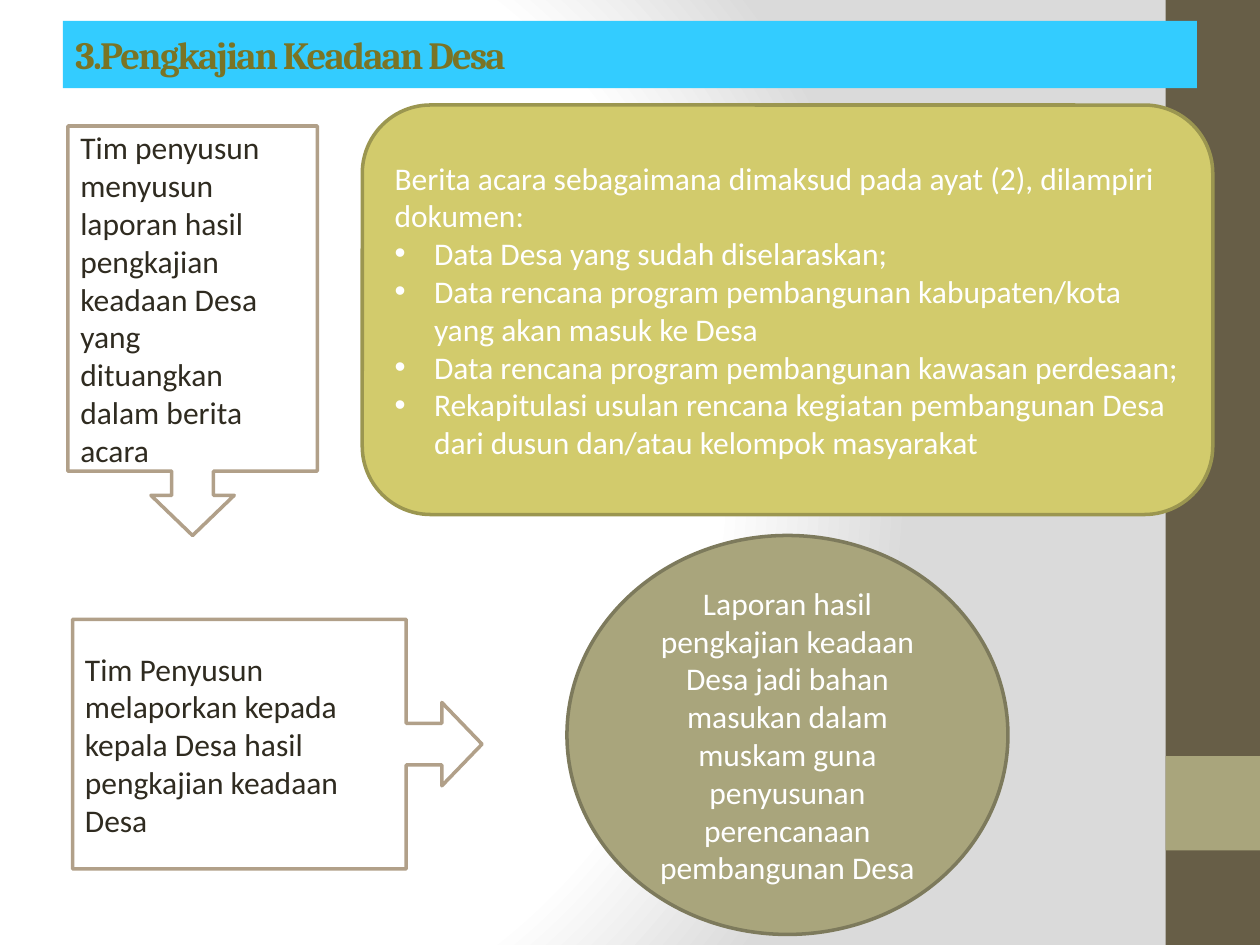
"""Build the village assessment slide (Pengkajian Keadaan Desa)."""
from dataclasses import dataclass
from typing import Optional

from pptx import Presentation
from pptx.dml.color import RGBColor
from pptx.enum.shapes import MSO_SHAPE as Shape
from pptx.enum.text import MSO_ANCHOR as Anchor, PP_ALIGN as Align
from pptx.oxml import parse_xml
from pptx.oxml.ns import nsdecls
from pptx.oxml.xmlchemy import OxmlElement
from pptx.util import Pt

WHITE = RGBColor(0xFF, 0xFF, 0xFF)
INK = RGBColor(0x2F, 0x2B, 0x20)
BROWN = RGBColor(0x67, 0x5E, 0x47)
SAGE = RGBColor(0xA9, 0xA5, 0x7C)
SAGE_EDGE = RGBColor(0x7D, 0x7A, 0x5C)
CYAN = RGBColor(0x33, 0xCC, 0xFF)
OLIVE = RGBColor(0x7A, 0x74, 0x25)
LIME = RGBColor(0xD2, 0xCB, 0x6C)
LIME_EDGE = RGBColor(0x9B, 0x96, 0x50)
TAN = RGBColor(0xB1, 0xA0, 0x89)

BULLET = "•"
BULLET_INDENT = Pt(22.5)
EDGE_WIDTH = Pt(2)
GRADIENT = (
    f'<a:gradFill {nsdecls("a")} rotWithShape="1"><a:gsLst>'
    '<a:gs pos="0"><a:srgbClr val="FFFFFF"/></a:gs>'
    '<a:gs pos="75000"><a:srgbClr val="FFFFFF"/></a:gs>'
    '<a:gs pos="100000"><a:srgbClr val="DADADA"/></a:gs></a:gsLst>'
    '<a:path path="circle"><a:fillToRect l="20000" t="50000" r="100000" b="50000"/>'
    "</a:path></a:gradFill>"
)


@dataclass(frozen=True)
class Panel:
    kind: Shape
    left: float
    top: float
    width: float
    height: float
    fill: RGBColor
    edge: Optional[RGBColor] = None
    lines: tuple[str, ...] = ()
    color: RGBColor = WHITE
    align: Align = Align.LEFT
    font: str = "Calibri"
    size: float = 18
    bold: bool = False
    spacing: int = 0
    adjustments: tuple[float, ...] = ()
    rotation: float = 0
    vertical: str = "horz"


PANELS = (
    Panel(Shape.RECTANGLE, 666, 0, 54, 540, BROWN),
    Panel(Shape.RECTANGLE, 666, 432, 54, 54, SAGE),
    Panel(Shape.RECTANGLE, 36, 12, 648, 38.4, CYAN,
          lines=("3.Pengkajian Keadaan Desa",), color=OLIVE,
          font="Cambria", size=22, bold=True, spacing=-100),
    Panel(Shape.ROUNDED_RECTANGLE, 207, 60, 486, 234, LIME, LIME_EDGE, (
        "Berita acara sebagaimana dimaksud pada ayat (2), dilampiri dokumen:",
        BULLET + "Data Desa yang sudah diselaraskan;",
        BULLET + "Data rencana program pembangunan kabupaten/kota yang akan masuk ke Desa",
        BULLET + "Data rencana program pembangunan kawasan perdesaan;",
        BULLET + "Rekapitulasi usulan rencana kegiatan pembangunan Desa dari dusun "
                 "dan/atau kelompok masyarakat",
    )),
    Panel(Shape.DOWN_ARROW_CALLOUT, 87.2, 308.2, 142.5, 234, WHITE, TAN,
          ("Tim Penyusun melaporkan kepada kepala Desa hasil pengkajian keadaan Desa",),
          INK, adjustments=(0.167, 0.167, 0.161, 0.815), rotation=270, vertical="vert"),
    Panel(Shape.DOWN_ARROW_CALLOUT, 38.8, 72, 142.5, 234, WHITE, TAN,
          ("Tim penyusun menyusun laporan hasil pengkajian keadaan Desa yang",
           "dituangkan dalam berita acara"),
          INK, adjustments=(0.167, 0.167, 0.161, 0.843)),
    Panel(Shape.OVAL, 324, 306, 252, 228, SAGE, SAGE_EDGE,
          ("Laporan hasil pengkajian keadaan Desa jadi bahan masukan dalam muskam "
           "guna penyusunan perencanaan pembangunan Desa",), align=Align.CENTER),
)


def add_bullet(para) -> None:
    """Give a paragraph a hanging bullet."""
    properties = para._p.get_or_add_pPr()
    properties.set("marL", str(BULLET_INDENT))
    properties.set("indent", str(-BULLET_INDENT))
    face = OxmlElement("a:buFont")
    face.set("typeface", "Arial")
    mark = OxmlElement("a:buChar")
    mark.set("char", BULLET)
    properties.extend((face, mark))


def write_text(box, panel: Panel) -> None:
    """Write the panel's lines as styled paragraphs."""
    frame = box.text_frame
    frame.word_wrap = True
    frame.vertical_anchor = Anchor.MIDDLE
    frame._txBody.bodyPr.set("vert", panel.vertical)
    for index, line in enumerate(panel.lines):
        para = frame.add_paragraph() if index else frame.paragraphs[0]
        para.alignment = panel.align
        if line.startswith(BULLET):
            add_bullet(para)
        span = para.add_run()
        span.text = line.removeprefix(BULLET)
        if panel.spacing:
            span._r.get_or_add_rPr().set("spc", str(panel.spacing))
        para.font.name = panel.font
        para.font.size = Pt(panel.size)
        para.font.bold = panel.bold
        para.font.color.rgb = panel.color


def draw_panel(page, panel: Panel) -> None:
    """Draw one filled shape with its edge and text."""
    box = page.shapes.add_shape(panel.kind, Pt(panel.left), Pt(panel.top),
                                Pt(panel.width), Pt(panel.height))
    box.shadow.inherit = False
    box.rotation = panel.rotation
    for index, value in enumerate(panel.adjustments):
        box.adjustments[index] = value
    box.fill.solid()
    box.fill.fore_color.rgb = panel.fill
    if panel.edge is None:
        box.line.fill.background()
    else:
        box.line.color.rgb = panel.edge
        box.line.width = EDGE_WIDTH
    if panel.lines:
        write_text(box, panel)


def paint_background(page) -> None:
    """Give the page its radial gradient."""
    page.background.fill.solid()
    properties = page.element.cSld.bg.bgPr
    properties.replace(properties[0], parse_xml(GRADIENT))


def main() -> None:
    """Build and save the deck."""
    deck = Presentation()
    deck.slide_width, deck.slide_height = Pt(720), Pt(540)
    page = deck.slides.add_slide(deck.slide_layouts[6])
    paint_background(page)
    for panel in PANELS:
        draw_panel(page, panel)
    deck.save("out.pptx")


if __name__ == "__main__":
    main()
